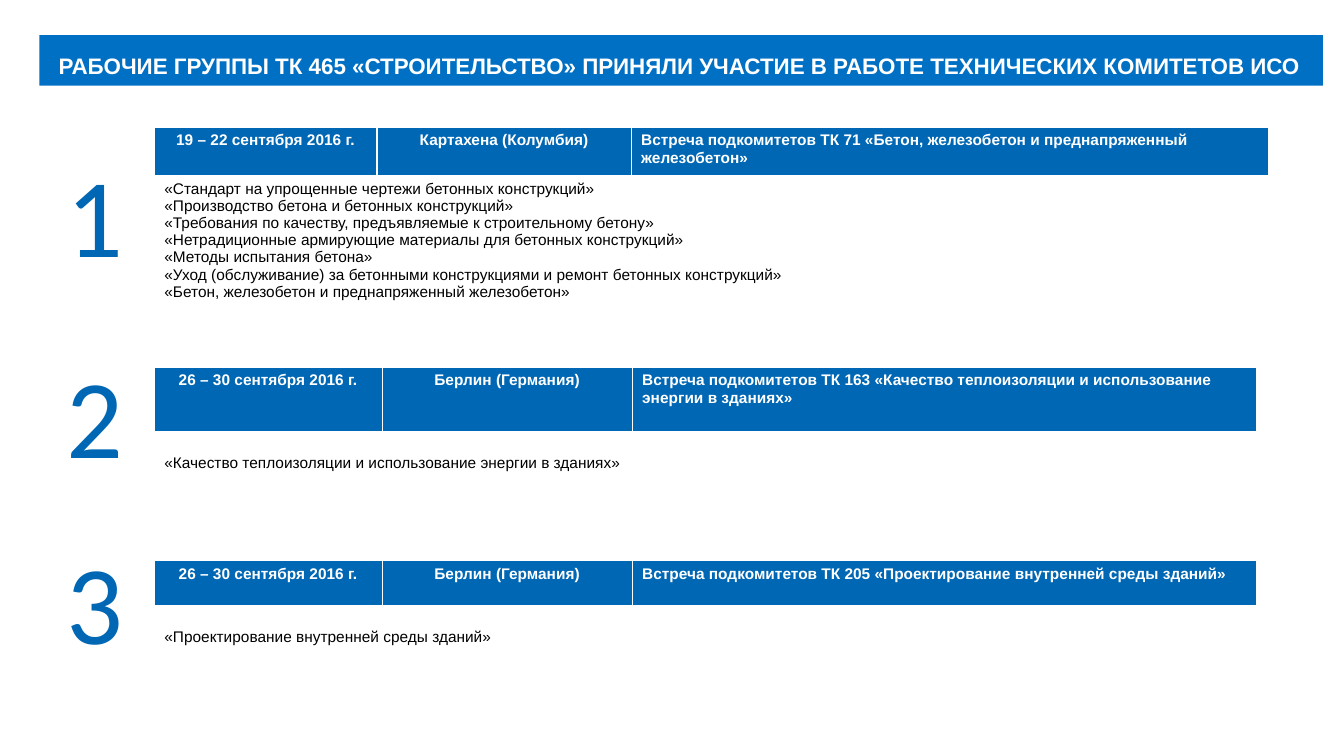
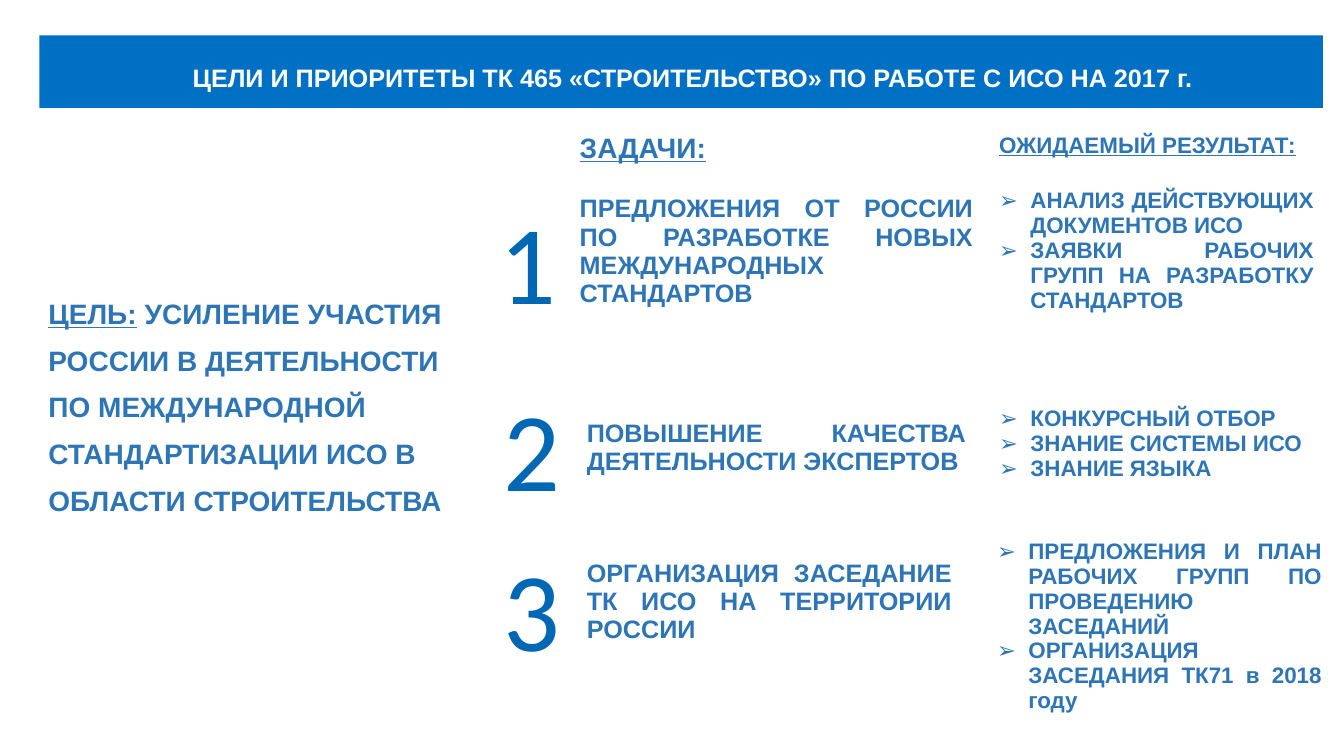
import lxml.etree
import pptx
import pptx.dml.color
import pptx.enum.shapes
import pptx.enum.text
import pptx.oxml.ns
import pptx.util

PX = 9144  # 100 px to the inch
COLORS = {
    "band": "0070C4",
    "header": "0067B4",
    "accent": "2E75B6",
    "white": "FFFFFF",
    "black": "000000",
}
ALIGN = pptx.enum.text.PP_ALIGN
AUTO_SIZE = pptx.enum.text.MSO_AUTO_SIZE
CELL_MARGIN = 5
BULLET_INDENT = 31
HEADING_GAP = 22

MEETINGS = [
    {
        "top": 126, "number_top": 139, "columns": (221, 252, 632), "rows": (48, 147),
        "body_margin": CELL_MARGIN,
        "header": (
            "19 – 22 сентября 2016 г.",
            "Картахена (Колумбия)",
            "Встреча подкомитетов ТК 71 «Бетон, железобетон и преднапряженный железобетон»",
        ),
        "topics": [
            "«Стандарт на упрощенные чертежи бетонных конструкций»",
            "«Производство бетона и бетонных конструкций»",
            "«Требования по качеству, предъявляемые к строительному бетону»",
            "«Нетрадиционные армирующие материалы для бетонных конструкций»",
            "«Методы испытания бетона»",
            "«Уход (обслуживание) за бетонными конструкциями и ремонт бетонных конструкций»",
            "«Бетон, железобетон и преднапряженный железобетон»",
        ],
    },
    {
        "top": 364, "number_top": 339, "columns": (226, 248, 619), "rows": (64, 66),
        "body_margin": 23,
        "header": (
            "26 – 30 сентября 2016 г.",
            "Берлин (Германия)",
            "Встреча подкомитетов ТК 163 «Качество теплоизоляции и использование "
            "энергии в зданиях»",
        ),
        "topics": ["«Качество теплоизоляции и использование энергии в зданиях»"],
    },
    {
        "top": 556, "number_top": 523, "columns": (226, 248, 619), "rows": (45, 67),
        "body_margin": 23,
        "header": (
            "26 – 30 сентября 2016 г.",
            "Берлин (Германия)",
            "Встреча подкомитетов ТК 205 «Проектирование внутренней среды зданий»",
        ),
        "topics": ["«Проектирование внутренней среды зданий»"],
    },
]

# Each block: box, heading, text, top margin
TASKS = [
    ((565, 127, 410, 225), "ЗАДАЧИ:",
     "ПРЕДЛОЖЕНИЯ ОТ РОССИИ ПО РАЗРАБОТКЕ НОВЫХ МЕЖДУНАРОДНЫХ СТАНДАРТОВ"),
    ((572, 411, 396, 70), None, "ПОВЫШЕНИЕ КАЧЕСТВА ДЕЯТЕЛЬНОСТИ ЭКСПЕРТОВ"),
    ((572, 550, 382, 100), None, "ОРГАНИЗАЦИЯ ЗАСЕДАНИЕ ТК ИСО НА ТЕРРИТОРИИ РОССИИ"),
]
RESULTS = [
    ((981, 127, 332, 225), "ОЖИДАЕМЫЙ РЕЗУЛЬТАТ:", CELL_MARGIN,
     ["АНАЛИЗ ДЕЙСТВУЮЩИХ ДОКУМЕНТОВ ИСО",
      "ЗАЯВКИ РАБОЧИХ ГРУПП НА РАЗРАБОТКУ СТАНДАРТОВ"]),
    ((981, 374, 332, 176), None, 29,
     ["КОНКУРСНЫЙ ОТБОР", "ЗНАНИЕ СИСТЕМЫ ИСО", "ЗНАНИЕ ЯЗЫКА"]),
    ((979, 530, 342, 197), None, CELL_MARGIN,
     ["ПРЕДЛОЖЕНИЯ И ПЛАН РАБОЧИХ ГРУПП ПО ПРОВЕДЕНИЮ ЗАСЕДАНИЙ",
      "ОРГАНИЗАЦИЯ ЗАСЕДАНИЯ ТК71 в 2018 году"]),
]


def emu(*lengths):
    return [pptx.util.Emu(length * PX) for length in lengths]


def rgb(name):
    return pptx.dml.color.RGBColor.from_string(COLORS[name])


def format_runs(paragraph, size, color, bold=True, font="Arial"):
    for run in paragraph.runs:
        run.font.name = font
        run.font.size = pptx.util.Pt(size)
        run.font.bold = bold
        run.font.color.rgb = rgb(color)


def write_lines(text_frame, lines, size, color, bold=True, align=ALIGN.JUSTIFY):
    """Write one paragraph per line, all in the same style."""
    text_frame.text = "\n".join(lines)
    for paragraph in text_frame.paragraphs:
        paragraph.alignment = align
        format_runs(paragraph, size, color, bold)
    return text_frame.paragraphs


def add_bullet(paragraph):
    properties = paragraph._p.get_or_add_pPr()
    properties.set("marL", str(BULLET_INDENT * PX))
    properties.set("indent", str(-BULLET_INDENT * PX))
    for tag, attribute, value in (("a:buFont", "typeface", "Arial"),
                                  ("a:buChar", "char", "➢")):
        element = lxml.etree.SubElement(properties, pptx.oxml.ns.qn(tag))
        element.set(attribute, value)


def format_cell(cell, fill, margin_top=CELL_MARGIN):
    """Fill the cell, set its top margin and give it thin white borders."""
    cell.fill.solid()
    cell.fill.fore_color.rgb = rgb(fill)
    cell.margin_top = emu(margin_top)[0]
    properties = cell._tc.get_or_add_tcPr()
    for position, side in enumerate(("lnL", "lnR", "lnT", "lnB")):
        line = lxml.etree.Element(pptx.oxml.ns.qn("a:" + side), w=str(pptx.util.Pt(1)))
        solid = lxml.etree.SubElement(line, pptx.oxml.ns.qn("a:solidFill"))
        color = lxml.etree.SubElement(solid, pptx.oxml.ns.qn("a:srgbClr"))
        color.set("val", COLORS["white"])
        properties.insert(position, line)


def add_table(slide, left, top, columns, rows):
    frame = slide.shapes.add_table(
        len(rows), len(columns), *emu(left, top, sum(columns), sum(rows)))
    table = frame.table
    table.first_row = False
    table.horz_banding = False
    for column, width in zip(table.columns, emu(*columns)):
        column.width = width
    for row, height in zip(table.rows, emu(*rows)):
        row.height = height
    return table


def add_text_block(slide, box, margin_top=CELL_MARGIN):
    """Add a one-cell white table and return its text frame."""
    left, top, width, height = box
    cell = add_table(slide, left, top, [width], [height]).cell(0, 0)
    format_cell(cell, "white", margin_top)
    return cell.text_frame


def format_heading(paragraph, size):
    format_runs(paragraph, size, "accent")
    paragraph.runs[0].font.underline = True
    paragraph.space_after = pptx.util.Pt(HEADING_GAP)


def add_number(slide, left, top, number):
    box = slide.shapes.add_textbox(*emu(left, top, 77, 145))
    text_frame = box.text_frame
    text_frame.word_wrap = False
    text_frame.auto_size = AUTO_SIZE.SHAPE_TO_FIT_TEXT
    text_frame.text = str(number)
    format_runs(text_frame.paragraphs[0], 80, "header", bold=False, font="Calibri")


def add_titled_slide(presentation, title_text, size, title_box, band_height):
    """Add a slide whose title stands on a blue band."""
    slide = presentation.slides.add_slide(presentation.slide_layouts[5])
    title = slide.shapes.title
    title.left, title.top, title.width, title.height = emu(*title_box)

    band = slide.shapes.add_shape(
        pptx.enum.shapes.MSO_SHAPE.RECTANGLE, *emu(39, 35, 1273, band_height))
    band.shadow.inherit = False
    band.fill.solid()
    band.fill.fore_color.rgb = rgb("band")
    band.line.fill.background()
    title._element.addprevious(band._element)

    text_frame = title.text_frame
    text_frame.word_wrap = True
    text_frame.auto_size = AUTO_SIZE.NONE
    text_frame.vertical_anchor = pptx.enum.text.MSO_ANCHOR.MIDDLE
    text_frame.margin_left, text_frame.margin_right = emu(24, 10)
    text_frame.margin_top, text_frame.margin_bottom = emu(5, 5)
    paragraph, = write_lines(text_frame, [title_text], size, "white", align=ALIGN.CENTER)
    paragraph.line_spacing = 1.5
    return slide


def add_meeting(slide, meeting):
    table = add_table(slide, 153, meeting["top"], meeting["columns"], meeting["rows"])
    aligns = (ALIGN.CENTER, ALIGN.CENTER, ALIGN.LEFT)
    for column, (text, align) in enumerate(zip(meeting["header"], aligns)):
        cell = table.cell(0, column)
        format_cell(cell, "header")
        write_lines(cell.text_frame, [text], 11, "white", align=align)
    body = table.cell(1, 0)
    body.merge(table.cell(1, 2))
    format_cell(body, "white", meeting["body_margin"])
    write_lines(body.text_frame, meeting["topics"], 11, "black", bold=False)


def add_goal(slide):
    paragraph = add_text_block(slide, (38, 276, 445, 260)).paragraphs[0]
    paragraph.text = "ЦЕЛЬ:"
    paragraph.add_run().text = (
        " УСИЛЕНИЕ УЧАСТИЯ РОССИИ В ДЕЯТЕЛЬНОСТИ ПО МЕЖДУНАРОДНОЙ "
        "СТАНДАРТИЗАЦИИ ИСО В ОБЛАСТИ СТРОИТЕЛЬСТВА")
    paragraph.line_spacing = 1.5
    format_runs(paragraph, 20, "accent")
    paragraph.runs[0].font.underline = True


def add_task(slide, box, heading, text):
    lines = [heading, text] if heading else [text]
    paragraphs = write_lines(add_text_block(slide, box), lines, 18, "accent")
    if heading:
        format_heading(paragraphs[0], 20)


def add_result(slide, box, heading, margin_top, items):
    lines = [heading, *items] if heading else items
    text_frame = add_text_block(slide, box, margin_top)
    paragraphs = write_lines(text_frame, lines, 16, "accent")
    if heading:
        format_heading(paragraphs[0], 16)
    for paragraph in paragraphs[-len(items):]:
        add_bullet(paragraph)


def build_meetings_slide(presentation):
    slide = add_titled_slide(
        presentation,
        "РАБОЧИЕ ГРУППЫ ТК 465 «СТРОИТЕЛЬСТВО» ПРИНЯЛИ УЧАСТИЕ В РАБОТЕ "
        "ТЕХНИЧЕСКИХ КОМИТЕТОВ ИСО",
        16, (19, 31, 1296, 54), 50)
    for number, meeting in enumerate(MEETINGS, start=1):
        add_number(slide, 56, meeting["number_top"], number)
        add_meeting(slide, meeting)


def build_goals_slide(presentation):
    slide = add_titled_slide(
        presentation,
        "ЦЕЛИ И ПРИОРИТЕТЫ ТК 465 «СТРОИТЕЛЬСТВО» ПО РАБОТЕ С ИСО НА 2017 г.",
        18, (77, 32, 1206, 74), 72)
    add_goal(slide)
    for number, (left, top) in enumerate(((486, 186), (490, 372), (490, 530)), start=1):
        add_number(slide, left, top, number)
    for task in TASKS:
        add_task(slide, *task)
    for result in RESULTS:
        add_result(slide, *result)


def main():
    presentation = pptx.Presentation()
    presentation.slide_width, presentation.slide_height = emu(1333, 750)
    build_meetings_slide(presentation)
    build_goals_slide(presentation)
    presentation.save("out.pptx")


if __name__ == "__main__":
    main()
